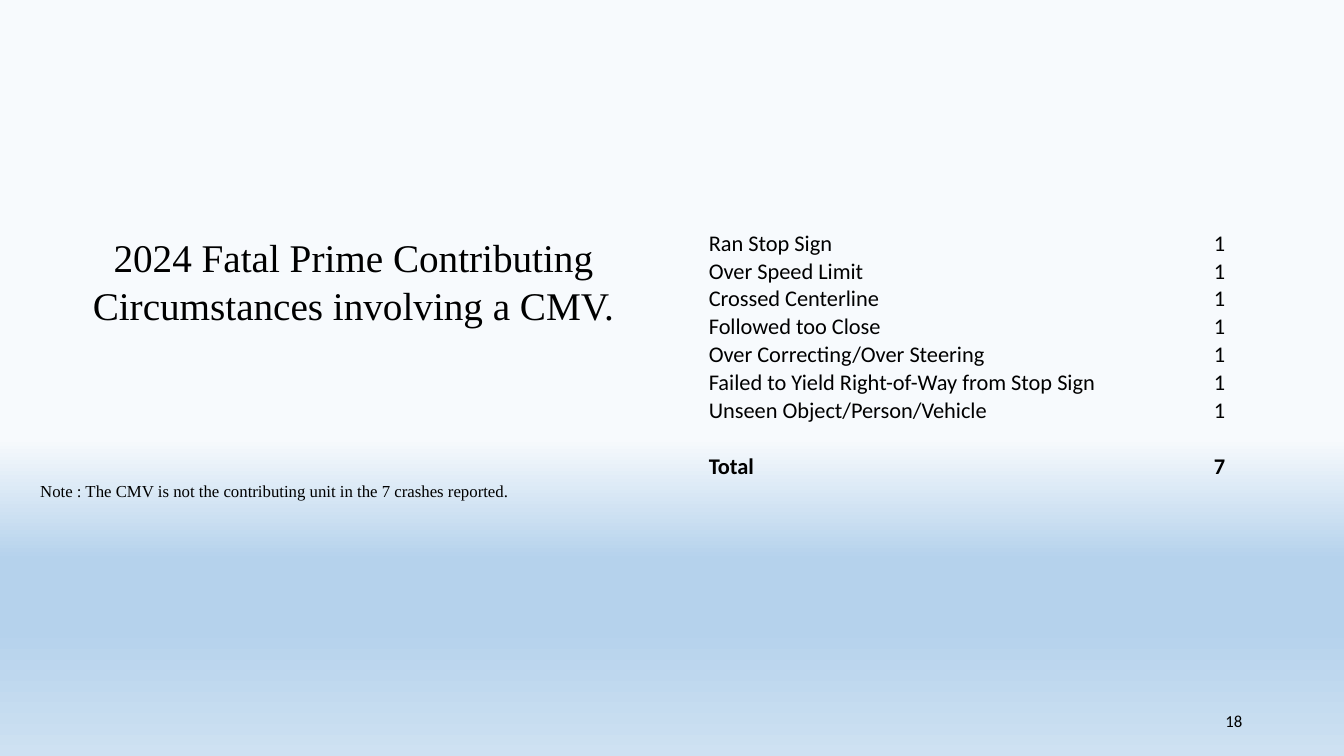
"""Builds the slide on prime contributing circumstances of fatal CMV crashes in 2024."""
from lxml.etree import SubElement
from pptx import Presentation
from pptx.dml.color import RGBColor
from pptx.enum.text import MSO_ANCHOR, PP_ALIGN
from pptx.oxml.ns import qn
from pptx.util import Inches, Pt

BLACK = RGBColor(0x00, 0x00, 0x00)
PALE = RGBColor(0xF7, 0xFA, 0xFD)
SKY = RGBColor(0xB5, 0xD2, 0xEC)
MIST = RGBColor(0xCE, 0xE1, 0xF2)
BACKDROP = [(58, PALE), (74, SKY), (83, SKY), (100, MIST)]
NO_GRID_STYLE = "{2D5ABB26-0587-4C30-8999-92F81FD0307C}"
SERIF, SANS = "Times New Roman", "Calibri"


def write(paragraph, text, size, font, align=PP_ALIGN.LEFT, bold=False):
    paragraph.alignment = align
    run = paragraph.add_run()
    run.text = text
    run.font.color.rgb = BLACK
    for name, value in {"size": Pt(size), "name": font, "bold": bold}.items():
        setattr(run.font, name, value)


def add_text_frame(left, top, width, height, anchor):
    box = slide.shapes.add_textbox(Inches(left), Inches(top), Inches(width), Inches(height))
    box.text_frame.word_wrap = True
    box.text_frame.vertical_anchor = anchor
    return box.text_frame


deck = Presentation()
deck.slide_width, deck.slide_height = Inches(13.33), Inches(7.5)
slide = deck.slides.add_slide(deck.slide_layouts[6])

backdrop_fill = slide.background.fill
backdrop_fill.gradient()
backdrop_fill.gradient_angle = 270
stops = slide.element.find(".//" + qn("a:gsLst"))
for old_stop in list(stops):
    stops.remove(old_stop)
for percent, color in BACKDROP:
    stop = SubElement(stops, qn("a:gs"), pos=str(percent * 1000))
    SubElement(stop, qn("a:srgbClr"), val=str(color))

page_number = add_text_frame(9.42, 6.95, 3, 0.4, MSO_ANCHOR.MIDDLE)
write(page_number.paragraphs[0], "18", 12, SANS, PP_ALIGN.RIGHT)

heading = add_text_frame(0.3, 2.27, 6.41, 4.07, MSO_ANCHOR.TOP)
write(heading.paragraphs[0], "2024 Fatal Prime Contributing Circumstances involving a CMV.",
      28, SERIF, PP_ALIGN.CENTER)
note = heading.add_paragraph()
note.space_before = Pt(109)
write(note, "Note : The CMV is not the contributing unit in the 7 crashes reported.", 12, SERIF)

circumstances = [
    ("Ran Stop Sign", "1"),
    ("Over Speed Limit", "1"),
    ("Crossed Centerline", "1"),
    ("Followed too Close", "1"),
    ("Over Correcting/Over Steering", "1"),
    ("Failed to Yield Right-of-Way from Stop Sign", "1"),
    ("Unseen Object/Person/Vehicle", "1"),
    ("", ""),
    ("Total", "7"),
]
crash_frame = slide.shapes.add_table(len(circumstances), 2, Inches(7.02), Inches(2.27),
                                     Inches(5.14), Inches(2.49))
crash_frame.element.find(".//" + qn("a:tableStyleId")).text = NO_GRID_STYLE
crashes = crash_frame.table
crashes.first_row = crashes.horz_banding = False
crashes.columns[0].width, crashes.columns[1].width = Inches(4.2), Inches(0.94)

cell_format = {
    "vertical_anchor": MSO_ANCHOR.BOTTOM,
    "margin_left": Inches(0.01),
    "margin_right": Inches(0.01),
    "margin_top": Inches(0.01),
    "margin_bottom": Inches(0),
}
for row, entry in enumerate(circumstances):
    for column, text in enumerate(entry):
        cell = crashes.cell(row, column)
        cell.fill.background()
        for name, value in cell_format.items():
            setattr(cell, name, value)
        line = cell.text_frame.paragraphs[0]
        if text:
            align = PP_ALIGN.RIGHT if column else PP_ALIGN.LEFT
            write(line, text, 16, SANS, align, entry[0] == "Total")
        else:
            SubElement(line._p, qn("a:endParaRPr"), sz="1600")

deck.save("out.pptx")
